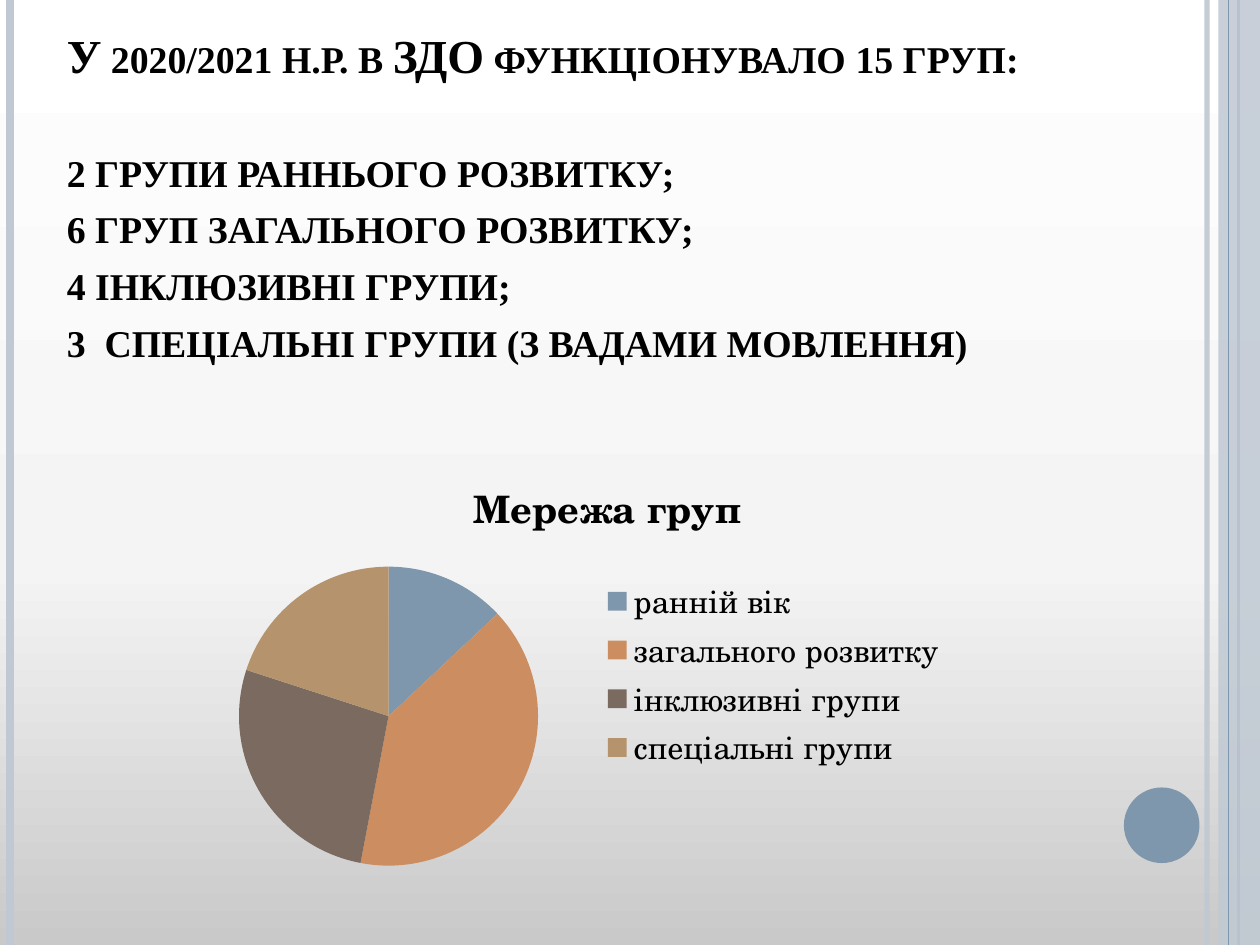
from lxml.etree import SubElement
from pptx import Presentation
from pptx.chart.data import CategoryChartData
from pptx.dml.color import RGBColor
from pptx.enum.chart import XL_CHART_TYPE, XL_LEGEND_POSITION
from pptx.enum.shapes import MSO_CONNECTOR, MSO_SHAPE
from pptx.enum.text import MSO_ANCHOR, MSO_AUTO_SIZE, PP_ALIGN
from pptx.oxml.ns import qn
from pptx.util import Inches, Pt

# Content
HEADING = "У 2020/2021 н.р. в ЗДО функціонувало 15 груп:"
GROUP_COUNTS = [
    "2 групи раннього розвитку;",
    "6 груп загального розвитку;",
    "4 інклюзивні групи;",
    "3  спеціальні групи (з вадами мовлення)",
]
CHART_TITLE = "Мережа груп"

BLACK = RGBColor(0x00, 0x00, 0x00)
BLUE = RGBColor(0x7E, 0x97, 0xAD)
PALE_BLUE = RGBColor(0xC0, 0xC9, 0xD3)
ORANGE = RGBColor(0xCC, 0x8E, 0x60)
BROWN = RGBColor(0x7A, 0x6A, 0x60)
TAN = RGBColor(0xB4, 0x93, 0x6D)
SHARES = [
    ("ранній вік", 13, BLUE),
    ("загального розвитку", 40, ORANGE),
    ("інклюзивні групи", 27, BROWN),
    ("спеціальні групи", 20, TAN),
]
BACKDROP = [(0, "C9C9C9"), (40, "F4F4F4"), (100, "FFFFFF")]
# x, colour, width in points, opacity in percent
STRIPES_BEHIND = [(9.58, PALE_BLUE, 3, 93), (0.08, PALE_BLUE, 4.5, 100), (9.83, BLUE, 1.5, 100)]
STRIPES_FRONT = [(9.75, BLUE, 0.75, 100)]
LINE_PITCH = Pt(32.4)


def set_opacity(fill_parent, percent):
    colour = next(fill_parent.iter(qn("a:srgbClr")))
    SubElement(colour, qn("a:alpha"), val=str(percent * 1000))


def add_stripes(slide, stripes):
    for x, colour, width, opacity in stripes:
        stripe = slide.shapes.add_connector(
            MSO_CONNECTOR.STRAIGHT, Inches(x), 0, Inches(x), Inches(7.5))
        stripe.line.color.rgb = colour
        stripe.line.width = Pt(width)
        properties = stripe._element.spPr
        if opacity < 100:
            set_opacity(properties, opacity)
        SubElement(properties, qn("a:effectLst"))


def add_block(slide, preset, colour, left, top, width, height):
    block = slide.shapes.add_shape(
        preset, Inches(left), Inches(top), Inches(width), Inches(height))
    block.shadow.inherit = False
    block.fill.solid()
    block.fill.fore_color.rgb = colour
    block.line.fill.background()
    return block


def write(paragraph, text, font="Times New Roman", size=27, bold=True, small_caps=False):
    run = paragraph.add_run()
    run.text = text
    run.font.name = font
    run.font.size = Pt(size)
    run.font.bold = bold
    run.font.color.rgb = BLACK
    if small_caps:
        run._r.get_or_add_rPr().set("cap", "small")


def set_layout(parent, x, y, w, h, inner=False):
    """Fix a chart part's place, as fractions of the chart."""
    layout = parent.find(qn("c:layout"))
    if layout is None:
        layout = parent.makeelement(qn("c:layout"))
        position = parent.find(qn("c:legendPos"))
        if position is None:
            parent.insert(0, layout)
        else:
            position.addnext(layout)
    manual = SubElement(layout, qn("c:manualLayout"))
    if inner:
        SubElement(manual, qn("c:layoutTarget"), val="inner")
    for mode in ("xMode", "yMode"):
        SubElement(manual, qn(f"c:{mode}"), val="edge")
    for key, value in zip("xywh", (x, y, w, h)):
        SubElement(manual, qn(f"c:{key}"), val=str(value))


def main():
    deck = Presentation()
    deck.slide_width, deck.slide_height = Inches(10), Inches(7.5)
    slide = deck.slides.add_slide(deck.slide_layouts[5])

    # Background gradient
    backdrop = slide.background.fill
    backdrop.gradient()
    backdrop.gradient_angle = 90
    stops = next(slide._element.iter(qn("a:gsLst")))
    for stop in list(stops):
        stops.remove(stop)
    for position, colour in BACKDROP:
        stop = SubElement(stops, qn("a:gs"), pos=str(position * 1000))
        SubElement(stop, qn("a:srgbClr"), val=colour)

    # Side stripes and circle
    add_stripes(slide, STRIPES_BEHIND)
    side_band = add_block(slide, MSO_SHAPE.RECTANGLE, PALE_BLUE, 9.67, 0, 0.33, 7.5)
    set_opacity(side_band._element.spPr, 87)
    add_stripes(slide, STRIPES_FRONT)
    add_block(slide, MSO_SHAPE.OVAL, BLUE, 8.92, 6.25, 0.6, 0.6)

    # Title with the group counts
    title = slide.shapes.title
    title.left, title.top = Inches(0.43), Inches(0.68)
    title.width, title.height = Inches(8.99), Inches(2.68)
    frame = title.text_frame
    frame.auto_size = MSO_AUTO_SIZE.NONE
    frame.word_wrap = True
    frame.vertical_anchor = MSO_ANCHOR.BOTTOM
    frame.margin_bottom = Inches(0.45)
    for index, text in enumerate([HEADING, *GROUP_COUNTS]):
        paragraph = frame.add_paragraph() if index else frame.paragraphs[0]
        paragraph.alignment = PP_ALIGN.LEFT
        paragraph.line_spacing = LINE_PITCH
        paragraph.space_before = Pt(0)
        paragraph.space_after = Pt(0) if index else LINE_PITCH
        write(paragraph, text, small_caps=True)

    # Pie chart of the groups
    shares = CategoryChartData()
    shares.categories = [name for name, _, _ in SHARES]
    shares.add_series("Series 1", [value for _, value, _ in SHARES])
    chart = slide.shapes.add_chart(
        XL_CHART_TYPE.PIE, Inches(1.77), Inches(3.59), Inches(6.11), Inches(3.49),
        shares).chart
    chart.font.name = "TeX Gyre Schola"
    chart.font.size = Pt(18)
    chart.font.color.rgb = BLACK
    chart.has_title = True
    write(chart.chart_title.text_frame.paragraphs[0], CHART_TITLE,
          font="TeX Gyre Schola", size=21.6)
    chart.has_legend = True
    chart.legend.position = XL_LEGEND_POSITION.RIGHT
    chart.legend.include_in_layout = False
    pie = chart.plots[0]
    pie.vary_by_categories = True
    for index, (_, _, colour) in enumerate(SHARES):
        wedge = pie.series[0].points[index].format.fill
        wedge.solid()
        wedge.fore_color.rgb = colour
    set_layout(chart._chartSpace.chart.plotArea, 0.02, 0.26, 0.39, 0.68, inner=True)
    set_layout(chart.legend._element, 0.44, 0.28, 0.55, 0.45)

    deck.save("out.pptx")


if __name__ == "__main__":
    main()
